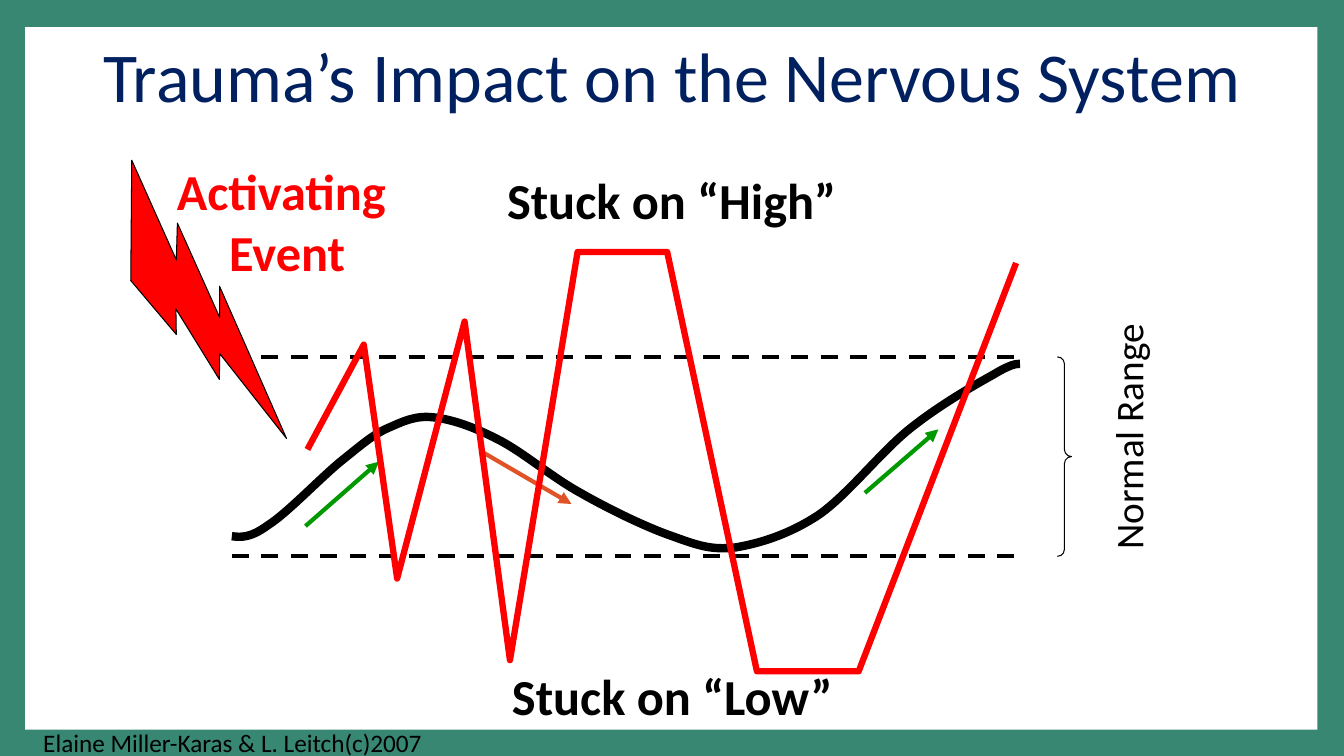
from dataclasses import dataclass

from lxml.etree import SubElement
from pptx import Presentation
from pptx.dml.color import RGBColor
from pptx.enum.dml import MSO_LINE
from pptx.enum.shapes import MSO_CONNECTOR, MSO_SHAPE
from pptx.enum.text import MSO_ANCHOR, PP_ALIGN
from pptx.oxml.ns import qn
from pptx.util import Pt

BLACK, RED, GREEN, ORANGE = "000000", "FF0000", "009900", "DF5327"
NAVY, WHITE, TEAL = "002060", "FFFFFF", "388773"
RANGE_LEFT, RANGE_RIGHT, RANGE_TOP, RANGE_BOTTOM = 165.6, 733, 254.9, 397.4


@dataclass
class Box:
    left: float
    top: float
    width: float
    height: float

    def lengths(self) -> tuple:
        return Pt(self.left), Pt(self.top), Pt(self.width), Pt(self.height)


@dataclass
class Label:
    text: str
    box: Box
    size: float
    color: str = BLACK
    bold: bool = False
    align: PP_ALIGN = PP_ALIGN.CENTER
    rotation: float = 0


@dataclass
class Segment:
    start: tuple
    end: tuple
    color: str = BLACK
    arrow: bool = False


LABELS = [
    Label("Activating \nEvent", Box(113, 110.9, 184.3, 94.3), 36, RED, True),
    Label("Stuck on “High”", Box(307.4, 117.4, 344.9, 51.1), 36, bold=True),
    Label("Stuck on “Low”", Box(319, 471.6, 322.6, 51.1), 36, bold=True),
    Label("Normal Range", Box(643, 291.6, 325.4, 41), 28, rotation=270),
    Label("Elaine Miller-Karas & L. Leitch(c)2007",
          Box(23.8, 516.2, 493.9, 59.8), 18, align=PP_ALIGN.LEFT),
]
TITLE = Label("Trauma’s Impact on the Nervous System",
              Box(39.6, 31, 881.3, 51.8), 50, NAVY)

SEGMENTS = [
    Segment((218.2, 375.8), (270.7, 329.8), GREEN, True),
    Segment((342.7, 321.8), (408.2, 360), ORANGE, True),
    Segment((617.8, 352.1), (670.3, 306.7), GREEN, True),
    Segment((RANGE_LEFT, RANGE_TOP), (RANGE_RIGHT, RANGE_TOP)),
    Segment((RANGE_LEFT, RANGE_BOTTOM), (RANGE_RIGHT, RANGE_BOTTOM)),
]

NORMAL_WAVE = [
    (165.6, 383),
    (172.1, 383.8), (178.6, 384.5), (191.5, 375.1),
    (205.2, 366.5), (229.7, 340.6), (244.1, 329),
    (258.5, 317.5), (265.7, 311), (276.5, 306),
    (288, 301), (296.6, 296.6), (309.6, 298.1),
    (322.6, 299.5), (337.7, 304.6), (355.7, 313.9),
    (373, 322.6), (393.8, 340.6), (414.7, 352.1),
    (434.9, 363.6), (461.5, 376.6), (480.2, 383),
    (498.2, 389.5), (508.3, 393.1), (525.6, 391),
    (542.9, 388.1), (563.8, 381.6), (584.6, 367.9),
    (605.5, 353.5), (629.3, 322.6), (650.2, 306),
    (671, 289.4), (696.2, 275), (709.2, 267.8),
    (722.2, 259.9), (725.8, 259.9), (728.6, 259.9),
]
TRAUMA_WAVE = [
    (219.6, 321.1), (259.9, 246.2), (283.7, 413.3), (331.9, 229.7),
    (364.3, 471.6), (412.6, 180), (476.6, 180), (540.7, 479.5),
    (613.4, 479.5), (725.8, 187.9),
]


def paint(fill, color: str) -> None:
    fill.solid()
    fill.fore_color.rgb = RGBColor.from_string(color)


def stroke(line, color: str, width: float) -> None:
    paint(line.fill, color)
    line.width = Pt(width)


def write(shape, label: Label) -> None:
    shape.left, shape.top, shape.width, shape.height = label.box.lengths()
    shape.rotation = label.rotation
    frame = shape.text_frame
    frame.word_wrap = True
    frame.text = label.text
    for para in frame.paragraphs:
        para.alignment = label.align
        for span in para.runs:
            span.font.name = "Calibri"
            span.font.size = Pt(label.size)
            span.font.bold = label.bold
            span.font.color.rgb = RGBColor.from_string(label.color)


def add_label(page, label: Label) -> None:
    write(page.shapes.add_textbox(*label.box.lengths()), label)


def add_preset(page, preset: MSO_SHAPE, box: Box):
    shape = page.shapes.add_shape(preset, *box.lengths())
    shape.shadow.inherit = False
    return shape


def add_segment(page, segment: Segment) -> None:
    ends = [Pt(value) for value in segment.start + segment.end]
    connector = page.shapes.add_connector(MSO_CONNECTOR.STRAIGHT, *ends)
    stroke(connector.line, segment.color, 3)
    if segment.arrow:
        SubElement(connector.line._get_or_add_ln(), qn("a:tailEnd"), type="triangle")
    else:
        connector.line.dash_style = MSO_LINE.DASH
    SubElement(connector._element.spPr, qn("a:effectLst"))


def add_wave(page, points: list, color: str, width: float, curved: bool = False) -> None:
    start, *rest = [(Pt(x), Pt(y)) for x, y in points]
    builder = page.shapes.build_freeform(*start)
    builder.add_line_segments(rest, close=False)
    wave = builder.convert_to_shape()
    wave.shadow.inherit = False
    wave.fill.background()
    stroke(wave.line, color, width)
    if curved:
        outline = wave._element.find(".//" + qn("a:path"))
        steps = outline.findall(qn("a:lnTo"))
        for first in range(0, len(steps), 3):
            curve = SubElement(outline, qn("a:cubicBezTo"))
            for step in steps[first:first + 3]:
                curve.append(step[0])
                outline.remove(step)


def main() -> None:
    deck = Presentation()
    deck.slide_width, deck.slide_height = Pt(960), Pt(540)
    page = deck.slides.add_slide(deck.slide_layouts[5])
    paint(page.background.fill, TEAL)

    panel = add_preset(page, MSO_SHAPE.RECTANGLE, Box(18, 19.4, 923, 501.8))
    paint(panel.fill, WHITE)
    panel.line.fill.background()
    page.shapes.title._element.addprevious(panel._element)

    add_wave(page, NORMAL_WAVE, BLACK, 6, curved=True)
    for segment in SEGMENTS:
        add_segment(page, segment)

    bolt = add_preset(page, MSO_SHAPE.LIGHTNING_BOLT, Box(33.8, 170.6, 215.3, 89.3))
    bolt.rotation = 259.7
    bolt._element.spPr.xfrm.set("flipH", "1")
    paint(bolt.fill, RED)
    stroke(bolt.line, BLACK, 0.75)

    add_wave(page, TRAUMA_WAVE, RED, 4.5)

    brace = add_preset(page, MSO_SHAPE.RIGHT_BRACE,
                       Box(755.3, RANGE_TOP, 10.1, RANGE_BOTTOM - RANGE_TOP))
    brace.adjustments[0] = brace.adjustments[1] = 0.5
    brace.fill.background()
    stroke(brace.line, BLACK, 0.75)

    for label in LABELS:
        add_label(page, label)
    title = page.shapes.title
    write(title, TITLE)
    title.text_frame.vertical_anchor = MSO_ANCHOR.MIDDLE
    title.text_frame.paragraphs[0].line_spacing = 0.9

    deck.save("out.pptx")


if __name__ == "__main__":
    main()
